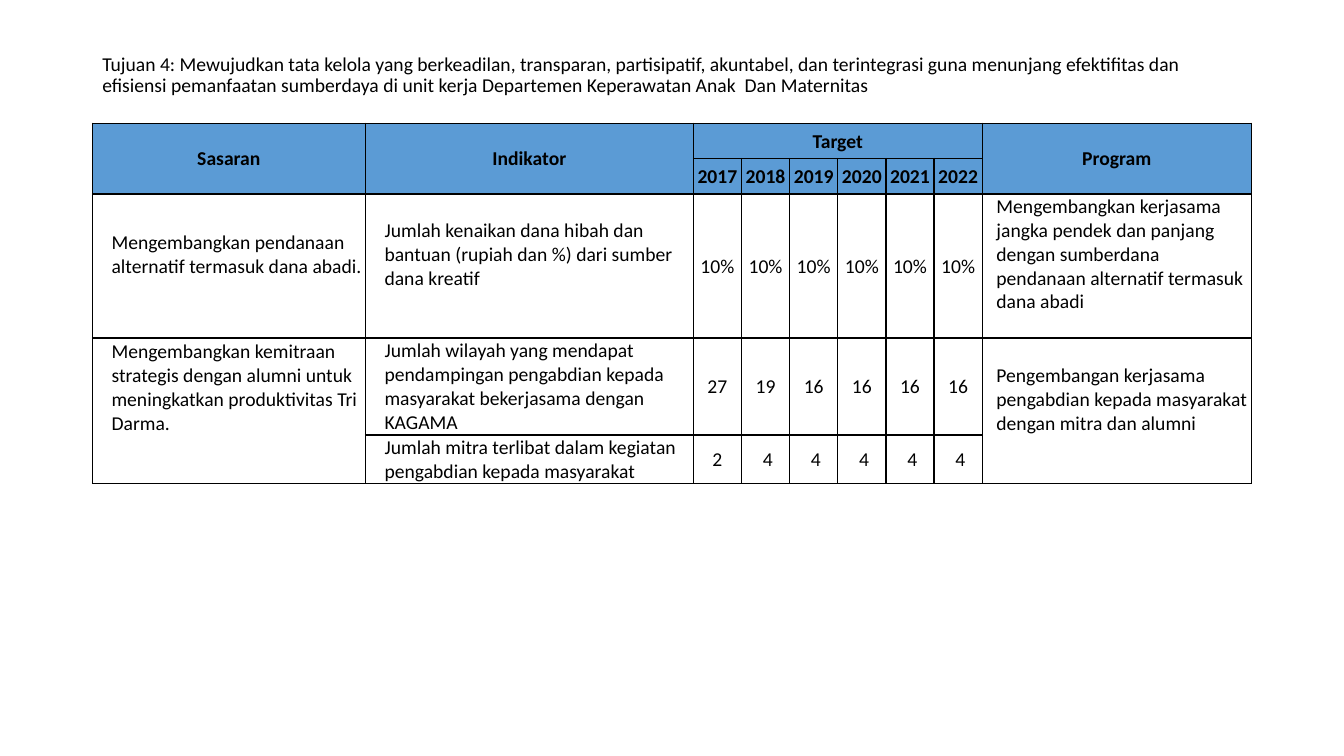
from lxml import etree
from pptx import Presentation
from pptx.dml.color import RGBColor
from pptx.enum.text import MSO_ANCHOR, PP_ALIGN
from pptx.oxml.ns import qn
from pptx.util import Pt

MIDDLE = MSO_ANCHOR.MIDDLE
CENTER = PP_ALIGN.CENTER
LEFT = PP_ALIGN.LEFT
BLACK = "000000"
HEADER_BLUE = "5B9BD5"
LINE_HEIGHT = 17.1


def color(value):
    return RGBColor.from_string(value)


def add_borders(cell):
    properties = cell._tc.get_or_add_tcPr()
    for position, side in enumerate(("lnL", "lnR", "lnT", "lnB")):
        line = etree.Element(qn(f"a:{side}"), w=str(Pt(1)))
        fill = etree.SubElement(line, qn("a:solidFill"))
        etree.SubElement(fill, qn("a:srgbClr"), val=BLACK)
        properties.insert(position, line)


presentation = Presentation()
presentation.slide_width = Pt(960)
presentation.slide_height = Pt(540)
slide = presentation.slides.add_slide(presentation.slide_layouts[6])

title = slide.shapes.add_textbox(Pt(66), Pt(28.75), Pt(828), Pt(51))
title_frame = title.text_frame
title_frame.word_wrap = True
title_frame.vertical_anchor = MIDDLE
title_frame.text = (
    "Tujuan 4: Mewujudkan tata kelola yang berkeadilan, transparan, partisipatif, "
    "akuntabel, dan terintegrasi guna menunjang efektifitas dan efisiensi pemanfaatan "
    "sumberdaya di unit kerja Departemen Keperawatan Anak  Dan Maternitas"
)
title_paragraph = title_frame.paragraphs[0]
title_paragraph.line_spacing = 0.9
title_font = title_paragraph.runs[0].font
title_font.name = "Calibri"
title_font.size = Pt(14)
title_font.color.rgb = color(BLACK)

rows = [
    ["Sasaran", "Indikator", "Target", "", "", "", "", "", "Program"],
    ["", "", "2017", "2018", "2019", "2020", "2021", "2022", ""],
    [
        "Mengembangkan pendanaan alternatif termasuk dana abadi.",
        "Jumlah kenaikan dana hibah dan bantuan (rupiah dan %) dari sumber dana kreatif",
        *["10%"] * 6,
        "Mengembangkan kerjasama jangka pendek dan panjang dengan sumberdana "
        "pendanaan alternatif termasuk dana abadi",
    ],
    [
        "Mengembangkan kemitraan strategis dengan alumni untuk meningkatkan "
        "produktivitas Tri Darma.",
        "Jumlah wilayah yang mendapat pendampingan pengabdian kepada masyarakat "
        "bekerjasama dengan KAGAMA",
        "27", "19", "16", "16", "16", "16",
        "Pengembangan kerjasama pengabdian kepada masyarakat dengan mitra dan alumni",
    ],
    [
        "",
        "Jumlah mitra terlibat dalam kegiatan pengabdian kepada masyarakat",
        "2", "4", "4", "4", "4", "4",
        "",
    ],
]
column_widths = [195, 234.3, *[34.4] * 6, 192.3]
row_heights = [25.3, 25.3, 102.9, 69.3, 34.9]
text_indents = {0: 13, 1: 13, 8: 9.5}
lines_below = {(2, 0): 1, (2, 1): 1, (2, 8): 1, (3, 0): 2, (3, 8): 1}
merges = [(0, 0, 1, 0), (0, 1, 1, 1), (0, 2, 0, 7), (0, 8, 1, 8), (3, 0, 4, 0), (3, 8, 4, 8)]

table = slide.shapes.add_table(
    len(rows), len(column_widths), Pt(66), Pt(88), Pt(sum(column_widths)), Pt(sum(row_heights))
).table
table.first_row = False
table.horz_banding = False
for column, width in zip(table.columns, column_widths):
    column.width = Pt(width)
for row, height in zip(table.rows, row_heights):
    row.height = Pt(height)
for top, left, bottom, right in merges:
    table.cell(top, left).merge(table.cell(bottom, right))

for row_index, texts in enumerate(rows):
    is_header = row_index < 2
    for column_index, text in enumerate(texts):
        cell = table.cell(row_index, column_index)
        is_description = not is_header and column_index in text_indents
        indent = text_indents[column_index] if is_description else 0
        if row_index == 4 and 3 <= column_index <= 7:
            indent = 3.2
        cell.vertical_anchor = MIDDLE
        cell.margin_left = Pt(0.7 + indent)
        cell.margin_right = cell.margin_top = Pt(0.7)
        cell.margin_bottom = Pt(LINE_HEIGHT * lines_below.get((row_index, column_index), 0))
        if is_header:
            cell.fill.solid()
            cell.fill.fore_color.rgb = color(HEADER_BLUE)
        else:
            cell.fill.background()
        add_borders(cell)
        cell.text_frame.text = text
        paragraph = cell.text_frame.paragraphs[0]
        paragraph.alignment = LEFT if is_description else CENTER
        paragraph.font.size = Pt(14)
        for run in paragraph.runs:
            run.font.name = "Calibri"
            run.font.size = Pt(14)
            run.font.bold = is_header
            run.font.color.rgb = color(BLACK)

presentation.save("out.pptx")
